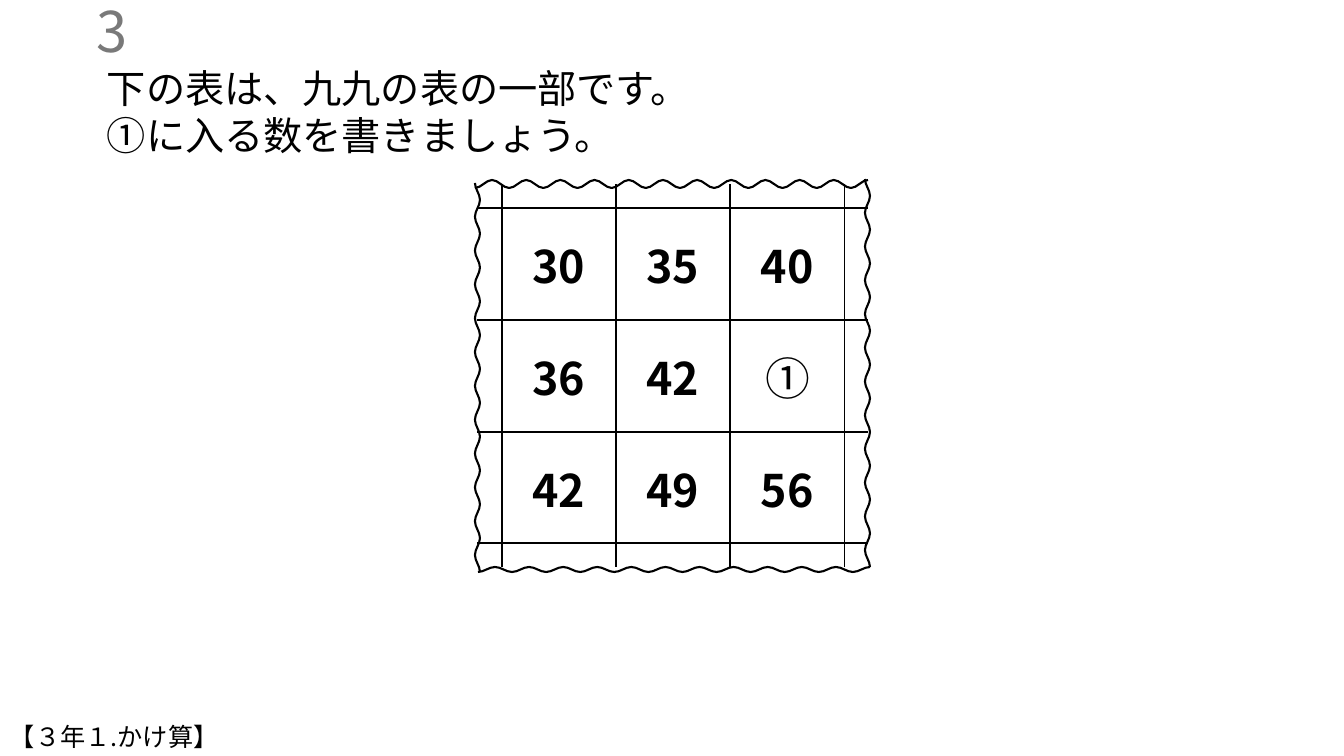
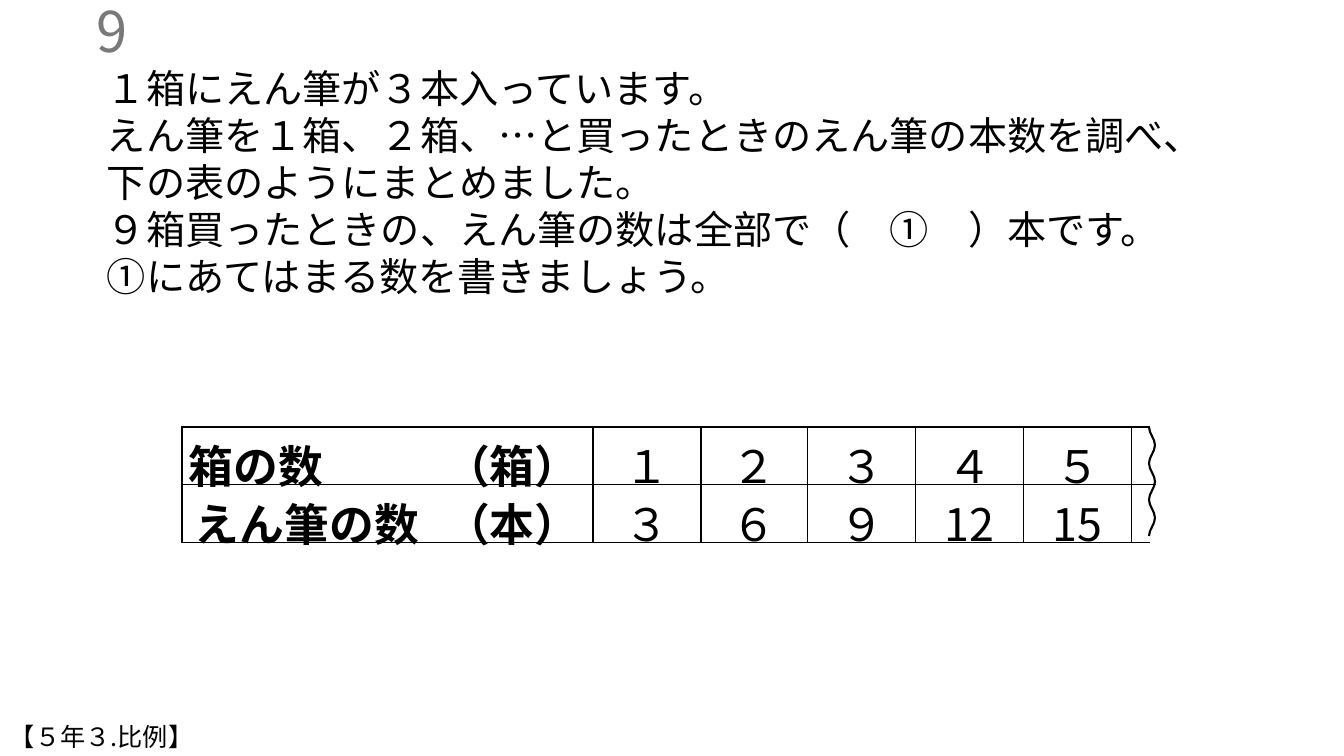
from dataclasses import dataclass

from lxml import etree
from pptx import Presentation
from pptx import util as u
from pptx.dml.color import RGBColor
from pptx.enum import text
from pptx.oxml.ns import qn

# Shared look
EMU_PER_PX = 914400 / 100.8
SLIDE_W, SLIDE_H = 1344, 756
FONT = "Noto Sans CJK JP"
BLACK = RGBColor(0x00, 0x00, 0x00)
GREY = RGBColor(0x79, 0x79, 0x79)
WHITE = RGBColor(0xFF, 0xFF, 0xFF)
CREST_PULL = 0.36  # how far a crest stays flat, as a share of a half wave
LEFT, CENTER, RIGHT = text.PP_ALIGN.LEFT, text.PP_ALIGN.CENTER, text.PP_ALIGN.RIGHT
TOP, MIDDLE = text.MSO_ANCHOR.TOP, text.MSO_ANCHOR.MIDDLE


@dataclass(frozen=True)
class Label:
    text: str
    bold: bool = False
    align: text.PP_ALIGN = CENTER
    anchor: text.MSO_ANCHOR = MIDDLE


@dataclass(frozen=True)
class Grid:
    left: int
    top: int
    cols: tuple[int, ...]
    rows: tuple[int, ...]
    labels: dict[tuple[int, int], Label]
    open_lines: set[int]  # vertical lines that are not drawn
    torn_cols: set[int]   # columns without a top and bottom edge
    side_margin: int
    leading: float | None = None
    space_after: int = 0


@dataclass(frozen=True)
class TornEdge:
    """A wave from one corner to the other; it starts and ends on a crest."""
    start: tuple[int, int]
    end: tuple[int, int]
    half_waves: int
    vertical: bool


@dataclass(frozen=True)
class Problem:
    number: str
    question: tuple[str, ...]
    question_height: int
    unit: str
    grid: Grid
    edges: tuple[TornEdge, ...]


def px(length: float) -> u.Emu:
    return u.Emu(round(length * EMU_PER_PX))


# Text
def add_run(paragraph, words: str, size: int, color: RGBColor = BLACK,
            bold: bool = False) -> None:
    run = paragraph.add_run()
    run.text = words
    run.font.size = u.Pt(size)
    run.font.bold = bold
    run.font.color.rgb = color
    run.font.name = FONT
    east_asian = etree.SubElement(run._r.get_or_add_rPr(), qn("a:ea"))
    east_asian.set("typeface", FONT)


def add_text(slide, box: tuple[int, int, int, int], lines: tuple[str, ...], size: int,
             color: RGBColor = BLACK, align: text.PP_ALIGN = LEFT,
             anchor: text.MSO_ANCHOR = TOP, grow: bool = True) -> None:
    frame = slide.shapes.add_textbox(*map(px, box)).text_frame
    frame.word_wrap = True
    frame.vertical_anchor = anchor
    if grow:
        frame.auto_size = text.MSO_AUTO_SIZE.SHAPE_TO_FIT_TEXT
    for i, line in enumerate(lines):
        paragraph = frame.add_paragraph() if i else frame.paragraphs[0]
        paragraph.alignment = align
        add_run(paragraph, line, size, color)


# Table
def set_border(cell, side: str, drawn: bool) -> None:
    line = etree.SubElement(cell._tc.get_or_add_tcPr(), qn(f"a:ln{side}"))
    line.set("w", str(u.Pt(1)))
    if drawn:
        fill = etree.SubElement(line, qn("a:solidFill"))
        etree.SubElement(fill, qn("a:srgbClr")).set("val", str(BLACK))
    else:
        etree.SubElement(line, qn("a:noFill"))


def add_grid(slide, grid: Grid) -> None:
    n_rows, n_cols = len(grid.rows), len(grid.cols)
    frame = slide.shapes.add_table(n_rows, n_cols, px(grid.left), px(grid.top),
                                   px(sum(grid.cols)), px(sum(grid.rows)))
    table = frame.table
    table.first_row = table.horz_banding = False
    for column, width in zip(table.columns, grid.cols):
        column.width = px(width)
    for row, height in zip(table.rows, grid.rows):
        row.height = px(height)

    for r in range(n_rows):
        for c in range(n_cols):
            cell = table.cell(r, c)
            label = grid.labels.get((r, c))
            cell.margin_top = cell.margin_bottom = 0
            cell.margin_left = cell.margin_right = px(grid.side_margin if label else 0)
            whole = c not in grid.torn_cols
            set_border(cell, "L", c not in grid.open_lines)
            set_border(cell, "R", c + 1 not in grid.open_lines)
            set_border(cell, "T", r > 0 or whole)
            set_border(cell, "B", r < n_rows - 1 or whole)
            cell.fill.background()

            paragraph = cell.text_frame.paragraphs[0]
            if label is None:
                # A tiny end mark keeps narrow rows at their height
                paragraph._p.get_or_add_endParaRPr().set("sz", "100")
                continue
            cell.vertical_anchor = label.anchor
            paragraph.alignment = label.align
            if grid.leading:
                paragraph.line_spacing = grid.leading
                paragraph.space_after = u.Pt(grid.space_after)
            add_run(paragraph, label.text, 32, bold=label.bold)


# Torn paper edge
def add_torn_edge(slide, edge: TornEdge) -> None:
    (x0, y0), (x1, y1) = edge.start, edge.end

    def crest(i: int) -> tuple[int, int]:
        along, across = i / edge.half_waves, i % 2
        tx, ty = (across, along) if edge.vertical else (along, across)
        return px(x0 + (x1 - x0) * tx), px(y0 + (y1 - y0) * ty)

    crests = [crest(i) for i in range(edge.half_waves + 1)]
    builder = slide.shapes.build_freeform(*crests[0])
    builder.add_line_segments(crests[1:], close=False)
    wave = builder.convert_to_shape()
    wave.shadow.inherit = False
    wave.fill.background()
    wave.line.color.rgb = BLACK
    wave.line.width = u.Pt(1.5)

    # Bend each straight segment into a curve that is flat at both crests
    left, top = min(x for x, _ in crests), min(y for _, y in crests)
    segments = list(wave._element.iter(qn("a:lnTo")))
    for segment, (ax, ay), (bx, by) in zip(segments, crests, crests[1:]):
        if edge.vertical:
            pull = round((by - ay) * CREST_PULL)
            controls = (ax, ay + pull), (bx, by - pull)
        else:
            pull = round((bx - ax) * CREST_PULL)
            controls = (ax + pull, ay), (bx - pull, by)
        curve = etree.Element(qn("a:cubicBezTo"))
        for x, y in (*controls, (bx, by)):
            point = etree.SubElement(curve, qn("a:pt"))
            point.set("x", str(x - left))
            point.set("y", str(y - top))
        segment.getparent().replace(segment, curve)


# Whole slide
def add_problem(prs, problem: Problem) -> None:
    slide = prs.slides.add_slide(prs.slide_layouts[6])
    slide.background.fill.solid()
    slide.background.fill.fore_color.rgb = WHITE
    add_text(slide, (97, 59, 1144, problem.question_height), problem.question, 28)
    add_text(slide, (-165, 10, 302, 40), (problem.number,), 40, GREY, RIGHT, MIDDLE,
             grow=False)
    add_grid(slide, problem.grid)
    for edge in problem.edges:
        add_torn_edge(slide, edge)
    add_text(slide, (0, 716, 755, 40), (problem.unit,), 18)


# Content
PRODUCTS = (("30", "35", "40"), ("36", "42", "①"), ("42", "49", "56"))
TIMES_TABLE = Problem(
    number="3",
    question=("下の表は、九九の表の一部です。", "①に入る数を書きましょう。"),
    question_height=105,
    unit="【３年１.かけ算】",
    grid=Grid(
        left=477, top=184, cols=(25, 114, 114, 115, 23), rows=(24, 112, 112, 111, 24),
        labels={(r, c): Label(product, bold=product != "①")
                for r, row in enumerate(PRODUCTS, 1) for c, product in enumerate(row, 1)},
        open_lines={0, 5}, torn_cols=set(range(5)), side_margin=0),
    edges=(
        TornEdge((475, 183), (480, 572), 23, vertical=True),
        TornEdge((865, 179), (870, 567), 23, vertical=True),
        TornEdge((478, 572), (870, 567), 23, vertical=False),
        TornEdge((475, 188), (868, 180), 23, vertical=False),
    ),
)


def count_labels(*counts: str) -> tuple[Label, ...]:
    return tuple(Label(count, anchor=TOP) for count in counts)


PENCIL_ROWS = (
    (Label("箱の数", True, LEFT), Label("（箱）", True),
     *count_labels("１", "２", "３", "４", "５")),
    (Label("えん筆の数", True), Label("（本）", True),
     *count_labels("３", "６", "９", "12", "15")),
)
PENCILS = Problem(
    number="9",
    question=("１箱にえん筆が３本入っています。",
              "えん筆を１箱、２箱、…と買ったときのえん筆の本数を調べ、下の表のようにまとめました。",
              "９箱買ったときの、えん筆の数は全部で（　①　）本です。",
              "①にあてはまる数を書きましょう。"),
    question_height=248,
    unit="【５年３.比例】",
    grid=Grid(
        left=182, top=427, cols=(250, 161, 108, 107, 108, 108, 108, 18, 6), rows=(41, 18),
        labels={(r, c): label
                for r, row in enumerate(PENCIL_ROWS) for c, label in enumerate(row)},
        open_lines={1, 8, 9}, torn_cols={8}, side_margin=7, leading=1.07, space_after=8),
    edges=(TornEdge((1149, 427), (1155, 536), 6, vertical=True),),
)


def main() -> None:
    prs = Presentation()
    prs.slide_width, prs.slide_height = px(SLIDE_W), px(SLIDE_H)
    for problem in (TIMES_TABLE, PENCILS):
        add_problem(prs, problem)
    prs.save("out.pptx")


if __name__ == "__main__":
    main()
